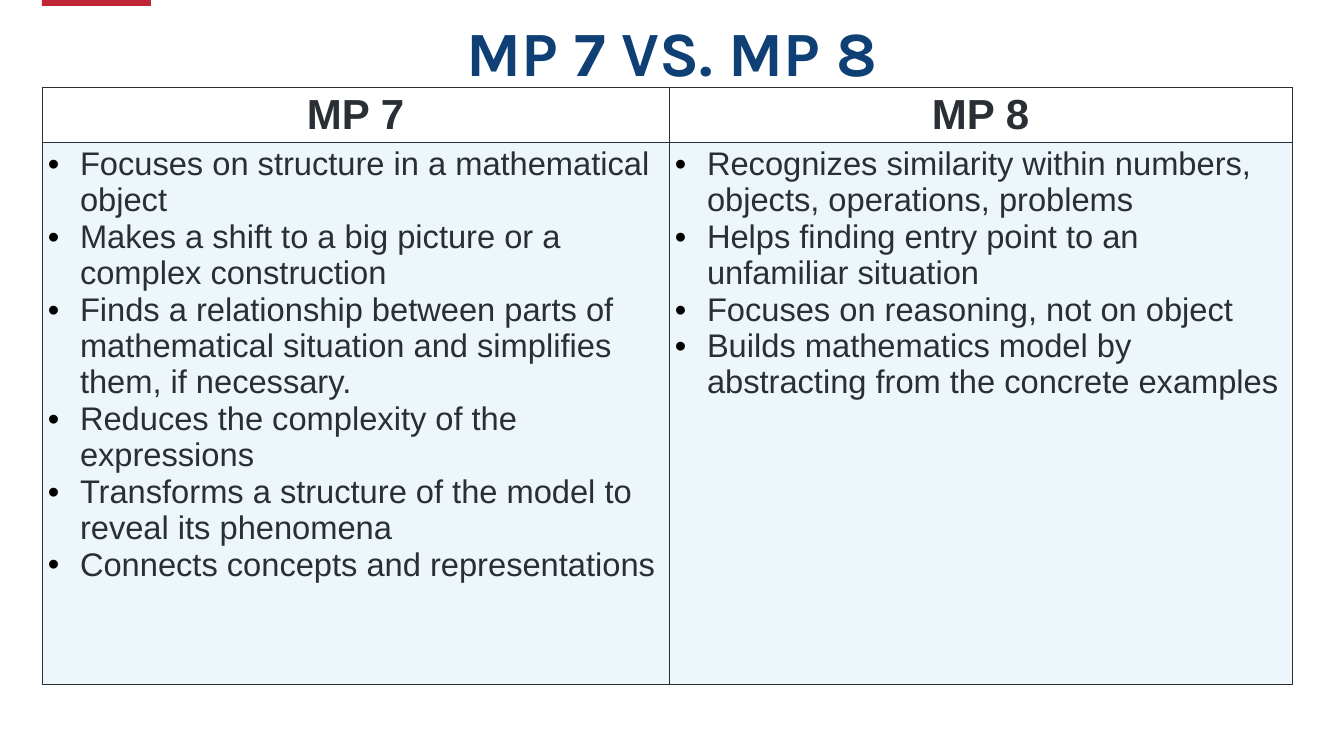
import pptx
import pptx.dml.color
import pptx.enum.shapes
import pptx.enum.text
import pptx.oxml
import pptx.oxml.ns
import pptx.util

EMU_PER_PX = 914400 // 84
INK = "2A2F36"
NAVY = "0E3F75"
RED = "C12637"
WHITE = "FFFFFF"
PALE_BLUE = "A6D4EC"
BULLET = "000000"
NAMESPACE = pptx.oxml.ns.nsdecls("a")
COLUMN_WIDTHS = [627, 623]
ROW_HEIGHTS = [55, 543]
PRACTICES = {
    "MP 7": [
        "Focuses on structure in a mathematical object",
        "Makes a shift to a big picture or a complex construction",
        "Finds a relationship between parts of mathematical situation and simplifies them, if necessary.",
        "Reduces the complexity of the expressions",
        "Transforms a structure of the model to reveal its phenomena",
        "Connects concepts and representations",
    ],
    "MP 8": [
        "Recognizes similarity within numbers, objects, operations, problems",
        "Helps finding entry point to an unfamiliar situation",
        "Focuses on reasoning, not on object",
        "Builds mathematics model by abstracting from the concrete examples",
    ],
}


def px(length):
    return pptx.util.Emu(length * EMU_PER_PX)


def color(value):
    return pptx.dml.color.RGBColor.from_string(value)


def add_bullet(paragraph):
    properties = paragraph._p.get_or_add_pPr()
    properties.set("marL", str(px(32)))
    properties.set("indent", str(px(-32)))
    for element in (
        f'<a:buClr {NAMESPACE}><a:srgbClr val="{BULLET}"/></a:buClr>',
        f'<a:buFont {NAMESPACE} typeface="Arial"/>',
        f'<a:buChar {NAMESPACE} char="•"/>',
    ):
        properties.append(pptx.oxml.parse_xml(element))


def write_text(frame, lines, size, font="Arial", ink=INK, bold=False,
               centered=False, bulleted=False, spacing=1.0):
    frame.word_wrap = True
    for index, line in enumerate(lines):
        paragraph = frame.add_paragraph() if index else frame.paragraphs[0]
        if bulleted:
            add_bullet(paragraph)
        alignment = pptx.enum.text.PP_ALIGN
        paragraph.alignment = alignment.CENTER if centered else alignment.LEFT
        paragraph.line_spacing = spacing
        paragraph.space_before = pptx.util.Pt(0)
        run = paragraph.add_run()
        run.text = line
        run.font.name = font
        run.font.size = pptx.util.Pt(size)
        run.font.bold = bold
        run.font.color.rgb = color(ink)


def format_cell(cell, fill, alpha=100):
    cell.margin_left = cell.margin_right = px(6)
    cell.margin_top = cell.margin_bottom = px(4)
    properties = cell._tc.get_or_add_tcPr()
    for side in ("lnL", "lnR", "lnT", "lnB"):
        properties.append(pptx.oxml.parse_xml(
            f'<a:{side} {NAMESPACE} w="12700"><a:solidFill>'
            f'<a:srgbClr val="{INK}"/></a:solidFill></a:{side}>'))
    cell.fill.solid()
    cell.fill.fore_color.rgb = color(fill)
    if alpha < 100:
        fill_color = properties.find(".//" + pptx.oxml.ns.qn("a:solidFill") + "[last()]")
        fill_color = properties.findall(pptx.oxml.ns.qn("a:solidFill"))[0][0]
        fill_color.append(pptx.oxml.parse_xml(
            f'<a:alpha {NAMESPACE} val="{alpha * 1000}"/>'))


def add_accent(slide):
    shape = slide.shapes.add_shape(
        pptx.enum.shapes.MSO_SHAPE.RECTANGLE, px(42), px(-4), px(109), px(10))
    shape.shadow.inherit = False
    shape.fill.solid()
    shape.fill.fore_color.rgb = color(RED)
    shape.line.fill.background()


def add_title(slide, text):
    title = slide.shapes.title
    title.left, title.top, title.width, title.height = px(42), px(14), px(1260), px(146)
    frame = title.text_frame
    frame.vertical_anchor = pptx.enum.text.MSO_ANCHOR.TOP
    frame.margin_top = px(8)
    write_text(frame, [text], 54, font="Karla", ink=NAVY, bold=True,
               centered=True, spacing=0.9)


def add_comparison(slide):
    table = slide.shapes.add_table(
        len(ROW_HEIGHTS), len(COLUMN_WIDTHS), px(42), px(87),
        px(sum(COLUMN_WIDTHS)), px(sum(ROW_HEIGHTS))).table
    table.first_row = False
    table.horz_banding = False
    for row, height in zip(table.rows, ROW_HEIGHTS):
        row.height = px(height)
    for index, (heading, points) in enumerate(PRACTICES.items()):
        table.columns[index].width = px(COLUMN_WIDTHS[index])
        header, body = table.cell(0, index), table.cell(1, index)
        format_cell(header, WHITE)
        write_text(header.text_frame, [heading], 36, bold=True, centered=True)
        format_cell(body, PALE_BLUE, alpha=20)
        write_text(body.text_frame, points, 28, bulleted=True)


def main():
    presentation = pptx.Presentation()
    presentation.slide_width = px(1344)
    presentation.slide_height = px(756)
    slide = presentation.slides.add_slide(presentation.slide_layouts[5])
    add_accent(slide)
    add_title(slide, "MP 7 VS. MP 8")
    add_comparison(slide)
    presentation.save("out.pptx")


if __name__ == "__main__":
    main()
